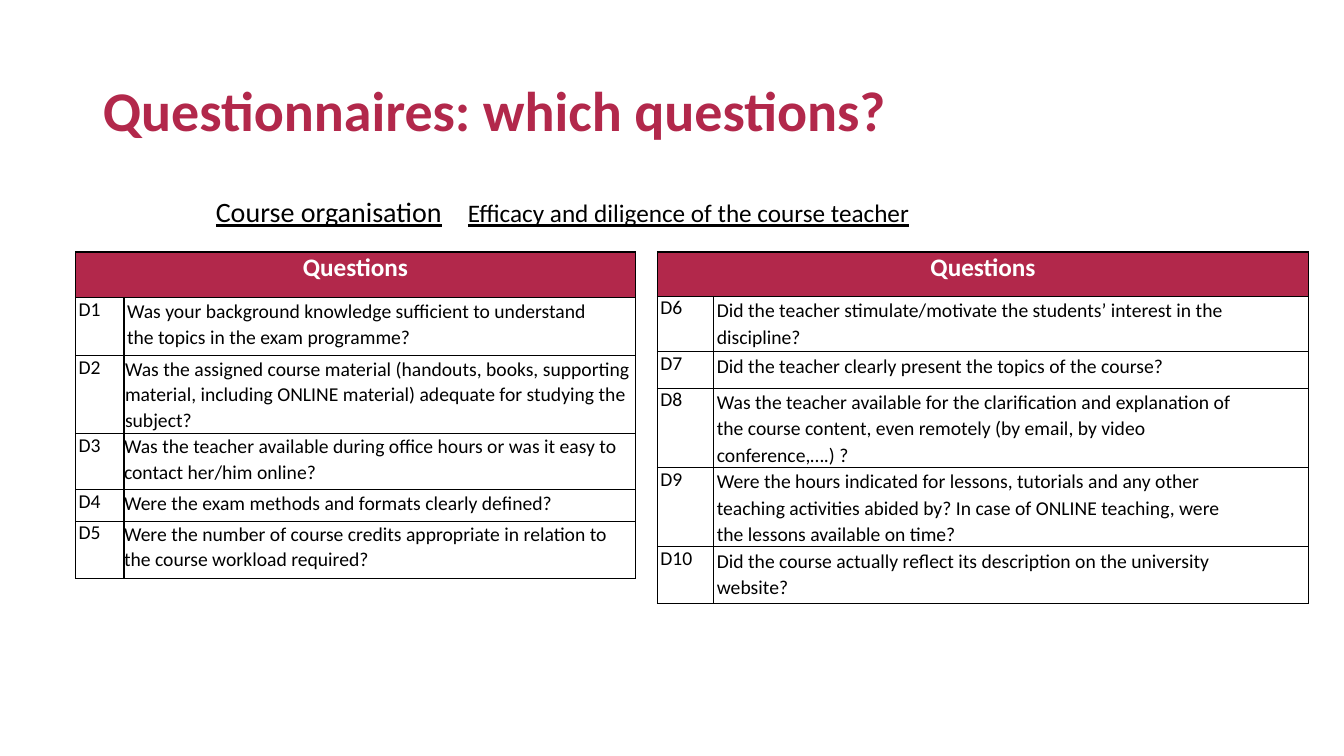
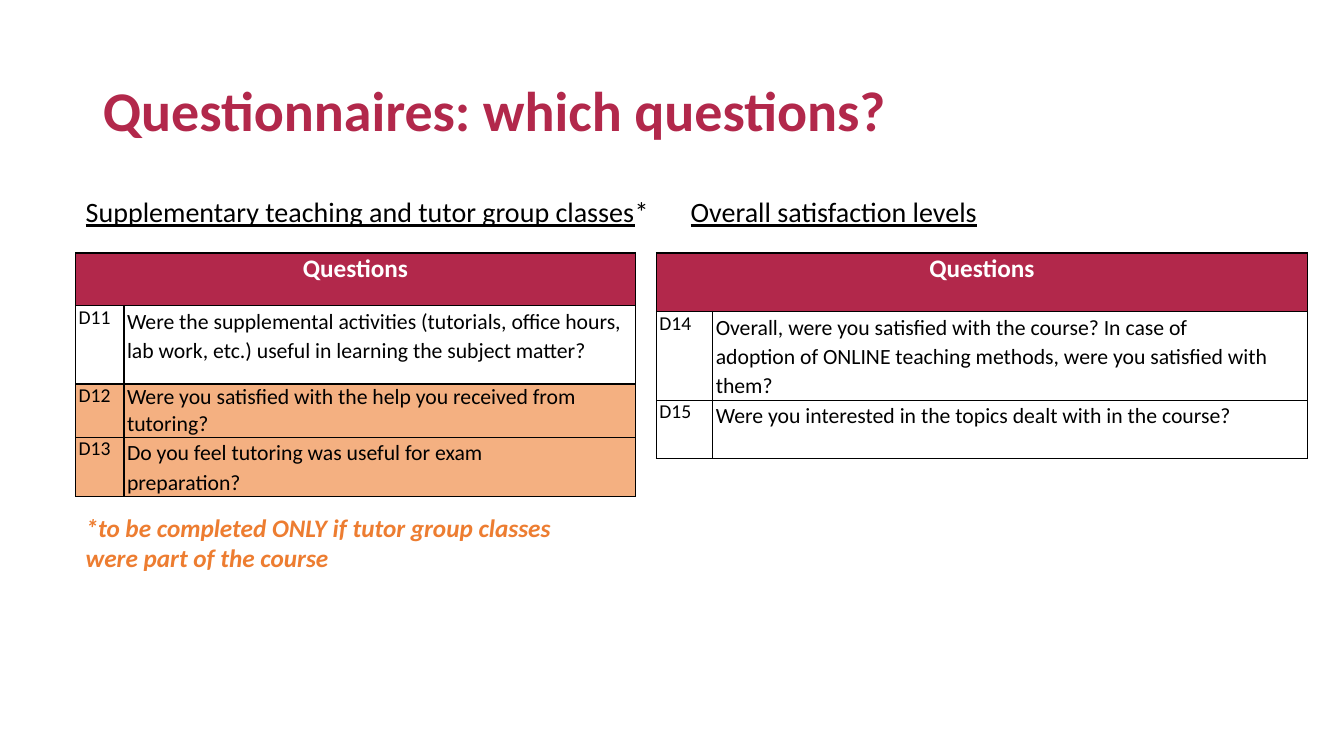
from dataclasses import dataclass

from lxml.etree import SubElement
from pptx import Presentation
from pptx.dml.color import RGBColor
from pptx.enum.text import MSO_ANCHOR as Anchor, MSO_AUTO_SIZE as AutoSize, PP_ALIGN as Align
from pptx.oxml.ns import qn
from pptx.util import Inches, Pt

COLORS = {
    "crimson": "B2284B",
    "white": "FFFFFF",
    "black": "000000",
    "peach": "F4B081",
    "orange": "ED7D31",
}
FONT = "Calibri"


@dataclass
class Question:
    code: str
    text: str
    height: float
    right: float = 0
    left: float = 0.03
    fill: str = "white"
    spacing: float = 1.11


class QuestionnaireDeck:
    """Holds the shared style and the current slide."""

    def __init__(self):
        self.deck = Presentation()
        self.deck.slide_width = Inches(13.33)
        self.deck.slide_height = Inches(7.5)
        self.page = None

    def add_page(self, title):
        self.page = self.deck.slides.add_slide(self.deck.slide_layouts[1])
        box = self.page.shapes.title
        self.place(box, 0.92, 0.4, 11.5, 1.45)
        box.text_frame.vertical_anchor = Anchor.MIDDLE
        para = box.text_frame.paragraphs[0]
        para.alignment = Align.LEFT
        para.line_spacing = 0.9
        self.add_span(para, title, 40, "crimson", bold=True)

    def place(self, box, left, top, width, height):
        box.left, box.top = Inches(left), Inches(top)
        box.width, box.height = Inches(width), Inches(height)
        box.text_frame.word_wrap = True
        box.text_frame.auto_size = AutoSize.NONE

    def add_span(self, para, text, size, color="black", bold=False, italic=False, underline=False):
        span = para.add_run()
        span.text = text
        font = span.font
        font.name, font.size = FONT, Pt(size)
        font.bold, font.italic, font.underline = bold, italic, underline
        font.color.rgb = RGBColor.from_string(COLORS[color])

    def add_headings(self, left, width, tab, spans):
        """One line of table headings; a tab stop starts the second one."""
        box = self.page.placeholders[1]
        self.place(box, left, 1.92, width, 0.59)
        para = box.text_frame.paragraphs[0]
        props = para._p.get_or_add_pPr()
        props.set("marL", "0")
        props.set("indent", "0")
        SubElement(props, qn("a:buNone"))
        stops = SubElement(props, qn("a:tabLst"))
        SubElement(stops, qn("a:tab"), pos=str(Inches(tab)), algn="l")
        para.line_spacing = 0.9
        para.space_before = Pt(0)
        for text, size, underline in spans:
            self.add_span(para, text, size, underline=underline)

    def style_cell(self, cell, fill, left=0, right=0):
        cell.margin_top = cell.margin_bottom = 0
        cell.margin_left, cell.margin_right = Inches(left), Inches(right)
        props = cell._tc.get_or_add_tcPr()
        for side in ("lnL", "lnR", "lnT", "lnB"):
            line = SubElement(props, qn(f"a:{side}"), w=str(Pt(0.85)))
            solid = SubElement(line, qn("a:solidFill"))
            SubElement(solid, qn("a:srgbClr"), val=COLORS["black"])
        cell.fill.solid()
        cell.fill.fore_color.rgb = RGBColor.from_string(COLORS[fill])

    def add_questions(self, left, top, widths, header_height, questions, size):
        heights = [header_height] + [question.height for question in questions]
        frame = self.page.shapes.add_table(
            len(heights), 2, Inches(left), Inches(top),
            Inches(sum(widths)), Inches(sum(heights)))
        table = frame.table
        table.first_row = table.horz_banding = False
        for column, width in zip(table.columns, widths):
            column.width = Inches(width)
        for row, height in zip(table.rows, heights):
            row.height = Inches(height)

        # Header across both columns
        header = table.cell(0, 0)
        header.merge(table.cell(0, 1))
        for cell in table.rows[0].cells:
            self.style_cell(cell, "crimson")
        para = header.text_frame.paragraphs[0]
        para.alignment = Align.CENTER
        self.add_span(para, "Questions", 18, "white", bold=True)

        # Code and question
        for number, question in enumerate(questions, start=1):
            code, wording = table.cell(number, 0), table.cell(number, 1)
            self.style_cell(code, question.fill, 0.03)
            self.add_span(code.text_frame.paragraphs[0], question.code, 14)
            self.style_cell(wording, question.fill, question.left, question.right)
            para = wording.text_frame.paragraphs[0]
            para.line_spacing = question.spacing
            self.add_span(para, question.text, size)

    def add_footnote(self, left, top, width, height, lines):
        box = self.page.shapes.add_textbox(0, 0, 0, 0)
        self.place(box, left, top, width, height)
        frame = box.text_frame
        for number, line in enumerate(lines):
            para = frame.add_paragraph() if number else frame.paragraphs[0]
            self.add_span(para, line, 18, "orange", bold=True, italic=True)

    def save(self):
        self.deck.save("out.pptx")


TITLE = "Questionnaires: which questions?"
LEFT_COLUMNS = (0.48, 5.07)
RIGHT_COLUMNS = (0.56, 5.9)

ORGANISATION = [
    Question("D1", "Was your background knowledge sufficient to understand the topics "
             "in the exam programme?", 0.58, right=0.35, spacing=1.09),
    Question("D2", "Was the assigned course material (handouts, books, supporting material, "
             "including ONLINE material) adequate for studying the subject?",
             0.77, left=0.01, spacing=1.07),
    Question("D3", "Was the teacher available during office hours or was it easy to "
             "contact her/him online?", 0.56, left=0, spacing=1.07),
    Question("D4", "Were the exam methods and formats clearly defined?",
             0.31, left=0, spacing=1.07),
    Question("D5", "Were the number of course credits appropriate in relation to the "
             "course workload required?", 0.57, left=0, spacing=1.07),
]
TEACHER = [
    Question("D6", "Did the teacher stimulate/motivate the students’ interest in the "
             "discipline?", 0.55, right=0.7),
    Question("D7", "Did the teacher clearly present the topics of the course?",
             0.36, right=0.7),
    Question("D8", "Was the teacher available for the clarification and explanation of the "
             "course content, even remotely (by email, by video conference,….) ?",
             0.78, right=0.7),
    Question("D9", "Were the hours indicated for lessons, tutorials and any other teaching "
             "activities abided by? In case of ONLINE teaching, were the lessons available "
             "on time?", 0.78, right=0.7),
    Question("D10", "Did the course actually reflect its description on the university "
             "website?", 0.56, right=0.7),
]
TUTORING = [
    Question("D11", "Were the supplemental activities (tutorials, office hours, lab work, "
             "etc.) useful in learning the subject matter?", 0.78, spacing=1.12),
    Question("D12", "Were you satisfied with the help you received from tutoring?",
             0.52, fill="peach", spacing=1),
    Question("D13", "Do you feel tutoring was useful for exam preparation?",
             0.58, right=0.6, fill="peach", spacing=1.12),
]
SATISFACTION = [
    Question("D14", "Overall, were you satisfied with the course? In case of adoption of "
             "ONLINE teaching methods, were you satisfied with them?", 0.88, right=0.39),
    Question("D15", "Were you interested in the topics dealt with in the course?", 0.58),
]


def main():
    deck = QuestionnaireDeck()

    # Course organisation and teacher
    deck.add_page(TITLE)
    deck.add_headings(2.04, 10.14, 5.3, [
        ("Course organisation", 20, True),
        ("\t", 18, False),
        ("Efficacy and diligence of the course teacher", 18, True),
    ])
    deck.add_questions(0.75, 2.5, LEFT_COLUMNS, 0.45, ORGANISATION, 14)
    deck.add_questions(6.52, 2.5, RIGHT_COLUMNS, 0.44, TEACHER, 14)

    # Tutor groups and overall satisfaction
    deck.add_page(TITLE)
    deck.add_headings(0.75, 12.22, 6.97, [
        ("Supplementary teaching and tutor group classes", 20, True),
        ("*\t", 20, False),
        ("Overall satisfaction levels", 20, True),
    ])
    deck.add_questions(0.75, 2.51, LEFT_COLUMNS, 0.52, TUTORING, 15.5)
    deck.add_questions(6.51, 2.51, RIGHT_COLUMNS, 0.58, SATISFACTION, 15.5)
    deck.add_footnote(0.75, 5.03, 5.41, 0.71, [
        "*to be completed ONLY if tutor group classes",
        "were part of the course",
    ])
    deck.save()


if __name__ == "__main__":
    main()
